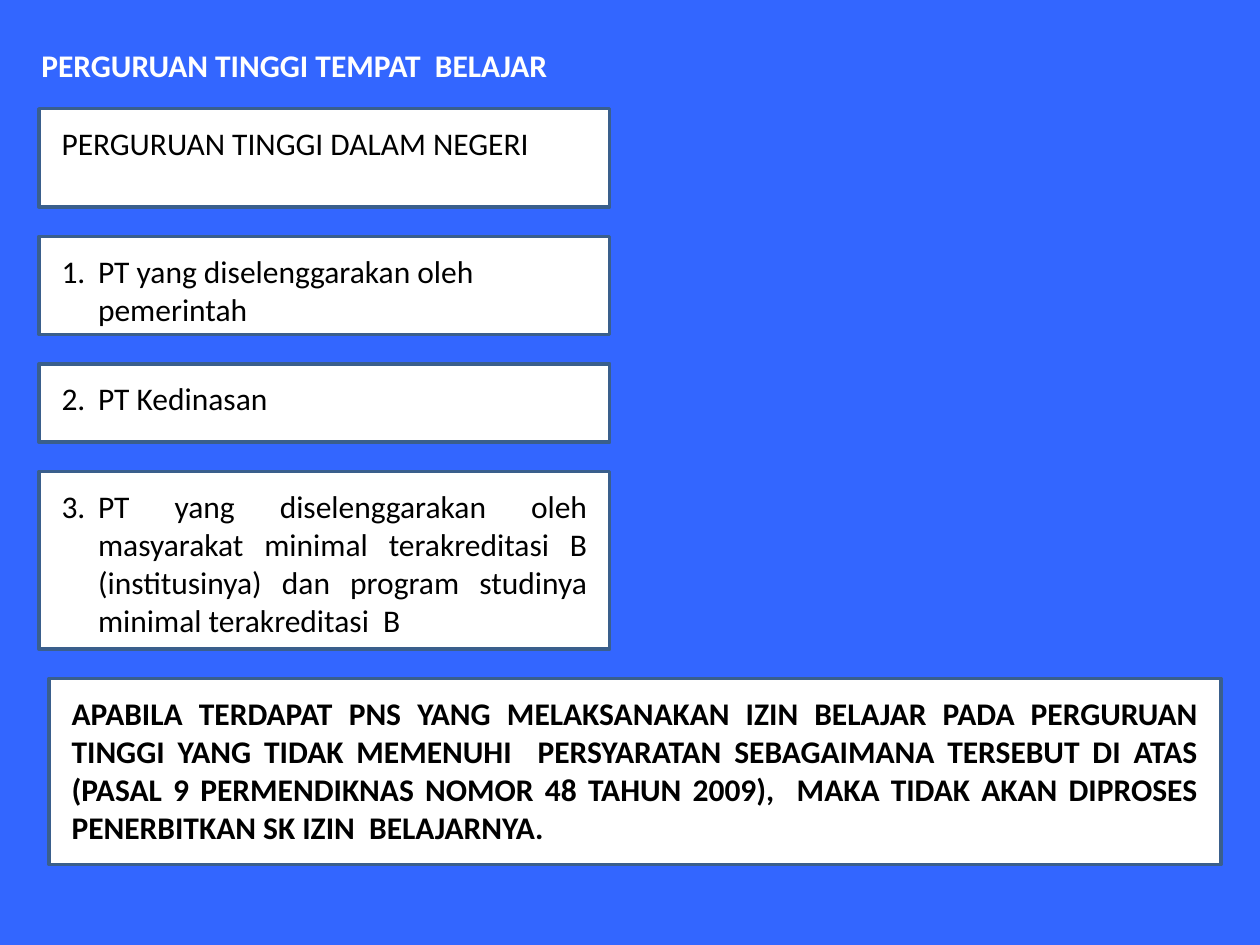
import pptx
import pptx.dml.color
import pptx.enum.shapes
import pptx.enum.text
import pptx.util
from dataclasses import dataclass

LEFT = pptx.enum.text.PP_ALIGN.LEFT
JUSTIFY = pptx.enum.text.PP_ALIGN.JUSTIFY


@dataclass(frozen=True)
class Theme:
    background: str = "3366FF"
    panel: str = "FFFFFF"
    border: str = "3A5F8C"
    title: str = "FFFFFF"
    body: str = "000000"
    font: str = "Calibri"
    size: int = 18
    border_width: int = 2


THEME = Theme()
WIDTH, HEIGHT = pptx.util.Inches(10), pptx.util.Inches(7.5)

# Layout in percent of the slide's width (x) or height (y)
TOP, GAP = 11.5, 3.1
INSET_X, INSET_Y = 0.8, 1
LINE, MARGINS = 4.05, 1.33
HANG = 2.9

# Panels from top to bottom:
# left, width, height, text lines, alignment, bold, hanging number, text
PANELS = [
    (3.1, 45.3, 10.4, 1, LEFT, False, False, "PERGURUAN TINGGI DALAM NEGERI"),
    (3.1, 45.3, 10.4, 2, LEFT, False, True,
     "1.\tPT yang diselenggarakan oleh pemerintah"),
    (3.1, 45.3, 8.3, 1, LEFT, False, True, "2.\tPT Kedinasan"),
    (3.1, 45.3, 18.8, 4, JUSTIFY, False, True,
     "3.\tPT yang diselenggarakan oleh masyarakat minimal terakreditasi B "
     "(institusinya) dan program studinya minimal terakreditasi  B"),
    (3.9, 93, 19.7, 4, JUSTIFY, True, False,
     "APABILA TERDAPAT PNS YANG MELAKSANAKAN IZIN BELAJAR PADA PERGURUAN "
     "TINGGI YANG TIDAK MEMENUHI  PERSYARATAN SEBAGAIMANA TERSEBUT DI ATAS "
     "(PASAL 9 PERMENDIKNAS NOMOR 48 TAHUN 2009),  MAKA TIDAK AKAN DIPROSES "
     "PENERBITKAN SK IZIN  BELAJARNYA."),
]


def rgb(value):
    return pptx.dml.color.RGBColor.from_string(value)


def across(percent):
    return round(WIDTH * percent / 100)


def down(percent):
    return round(HEIGHT * percent / 100)


def area(left, top, width, height):
    return across(left), down(top), across(width), down(height)


def add_panel(s, left, top, width, height):
    sp = s.shapes.add_shape(pptx.enum.shapes.MSO_SHAPE.RECTANGLE,
                            *area(left, top, width, height))
    sp.shadow.inherit = False
    sp.fill.solid()
    sp.fill.fore_color.rgb = rgb(THEME.panel)
    sp.line.color.rgb = rgb(THEME.border)
    sp.line.width = pptx.util.Pt(THEME.border_width)


def add_text(s, left, top, width, lines, text, color,
             align=LEFT, bold=False, hanging=False):
    sp = s.shapes.add_textbox(*area(left, top, width, lines * LINE + MARGINS))
    tf = sp.text_frame
    tf.word_wrap = True
    tf.auto_size = pptx.enum.text.MSO_AUTO_SIZE.SHAPE_TO_FIT_TEXT
    p = tf.paragraphs[0]
    p.alignment = align
    if hanging:
        pPr = p._p.get_or_add_pPr()
        pPr.set("marL", str(across(HANG)))
        pPr.set("indent", str(-across(HANG)))
    r = p.add_run()
    r.text = text
    r.font.name = THEME.font
    r.font.size = pptx.util.Pt(THEME.size)
    r.font.bold = bold
    r.font.color.rgb = rgb(color)


def main():
    prs = pptx.Presentation()
    prs.slide_width, prs.slide_height = WIDTH, HEIGHT
    s = prs.slides.add_slide(prs.slide_layouts[6])
    s.background.fill.solid()
    s.background.fill.fore_color.rgb = rgb(THEME.background)

    # Heading
    add_text(s, 2.3, 4.2, 94.5, 1, "PERGURUAN TINGGI TEMPAT  BELAJAR",
             THEME.title, bold=True)

    # Stack of panels with equal gaps
    top = TOP
    for left, width, height, lines, align, bold, hanging, text in PANELS:
        add_panel(s, left, top, width, height)
        add_text(s, left + INSET_X, top + INSET_Y, width - 2 * INSET_X, lines,
                 text, THEME.body, align, bold, hanging)
        top += height + GAP

    prs.save("out.pptx")


if __name__ == "__main__":
    main()
